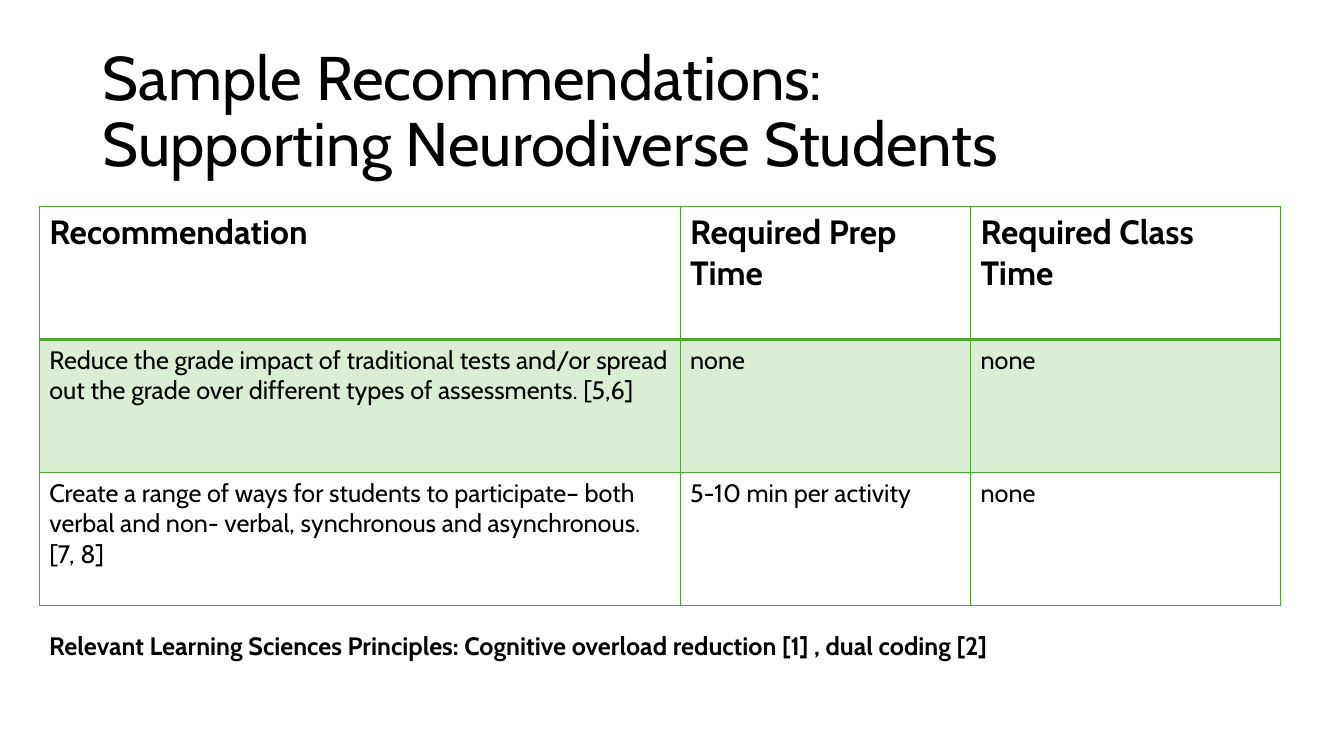
from dataclasses import dataclass

from lxml.etree import SubElement
from pptx import Presentation
from pptx.dml.color import RGBColor
from pptx.enum.text import MSO_ANCHOR as Anchor
from pptx.oxml.ns import qn
from pptx.util import Cm, Pt

FONT = "Cabin"
COLORS = {"text": "000000", "green": "4EA72E"}
TINT_ALPHA = 20  # percent opacity of the shaded row
COLUMN_WIDTHS = (16.15, 7.32, 7.82)
ROW_HEIGHT = 3.35


@dataclass
class Label:
    text: str
    left: float
    top: float
    width: float
    height: float
    size: float
    bold: bool = False
    anchor: Anchor = Anchor.TOP
    spacing: float = 1.0


@dataclass
class Row:
    texts: tuple[str, str, str]
    size: float = 18
    bold: bool = False
    shaded: bool = False
    top_line: float = 1
    bottom_line: float = 1


LABELS = [
    Label("Sample Recommendations:\vSupporting Neurodiverse Students",
          2.34, 1.02, 29.21, 3.68, 44, anchor=Anchor.MIDDLE, spacing=0.9),
    Label("Relevant Learning Sciences Principles: Cognitive overload reduction [1] , "
          "dual coding [2]", 0.99, 15.75, 25.76, 1.02, 18, bold=True),
]
ROWS = [
    Row(("Recommendation", "Required Prep Time", "Required Class Time"),
        size=24, bold=True, bottom_line=2),
    Row(("Reduce the grade impact of traditional tests and/or spread out the grade "
         "over different types of assessments. [5,6]", "none", "none"),
        shaded=True, top_line=2),
    Row(("Create a range of ways for students to participate– both verbal and "
         "non- verbal, synchronous and asynchronous. [7, 8]",
         "5-10 min per activity", "none")),
]


def format_runs(para, size: float, bold: bool) -> None:
    for span in para.runs:
        span.font.name = FONT
        span.font.size = Pt(size)
        span.font.bold = bold
        span.font.color.rgb = RGBColor.from_string(COLORS["text"])


def add_label(page, label: Label) -> None:
    box = page.shapes.add_textbox(Cm(label.left), Cm(label.top),
                                  Cm(label.width), Cm(label.height))
    frame = box.text_frame
    frame.word_wrap = True
    frame.vertical_anchor = label.anchor
    para = frame.paragraphs[0]
    para.text = label.text
    para.line_spacing = label.spacing
    format_runs(para, label.size, label.bold)


def add_borders(cell, row: Row) -> None:
    properties = cell._tc.get_or_add_tcPr()
    widths = {"lnL": 1, "lnR": 1, "lnT": row.top_line, "lnB": row.bottom_line}
    for side, width in widths.items():
        line = SubElement(properties, qn(f"a:{side}"), w=str(Pt(width)))
        fill = SubElement(line, qn("a:solidFill"))
        SubElement(fill, qn("a:srgbClr"), val=COLORS["green"])


def fill_cell(cell, shaded: bool) -> None:
    if not shaded:
        cell.fill.background()
        return
    cell.fill.solid()
    cell.fill.fore_color.rgb = RGBColor.from_string(COLORS["green"])
    color = cell._tc.tcPr.find(qn("a:solidFill")).find(qn("a:srgbClr"))
    SubElement(color, qn("a:alpha"), val=str(TINT_ALPHA * 1000))


def add_recommendations(page) -> None:
    table = page.shapes.add_table(
        len(ROWS), len(COLUMN_WIDTHS), Cm(0.99), Cm(5.21),
        Cm(sum(COLUMN_WIDTHS)), Cm(ROW_HEIGHT * len(ROWS))).table
    table.first_row = False
    table.horz_banding = False
    for column, width in zip(table.columns, COLUMN_WIDTHS):
        column.width = Cm(width)
    for row_index, row in enumerate(ROWS):
        table.rows[row_index].height = Cm(ROW_HEIGHT)
        for column_index, text in enumerate(row.texts):
            cell = table.cell(row_index, column_index)
            cell.text_frame.text = text
            format_runs(cell.text_frame.paragraphs[0], row.size, row.bold)
            add_borders(cell, row)
            fill_cell(cell, row.shaded)


def main() -> None:
    deck = Presentation()
    deck.slide_width, deck.slide_height = Cm(33.87), Cm(19.05)
    page = deck.slides.add_slide(deck.slide_layouts[6])

    # Title and closing line
    for label in LABELS:
        add_label(page, label)

    # Table of recommendations
    add_recommendations(page)

    deck.save("out.pptx")


if __name__ == "__main__":
    main()
